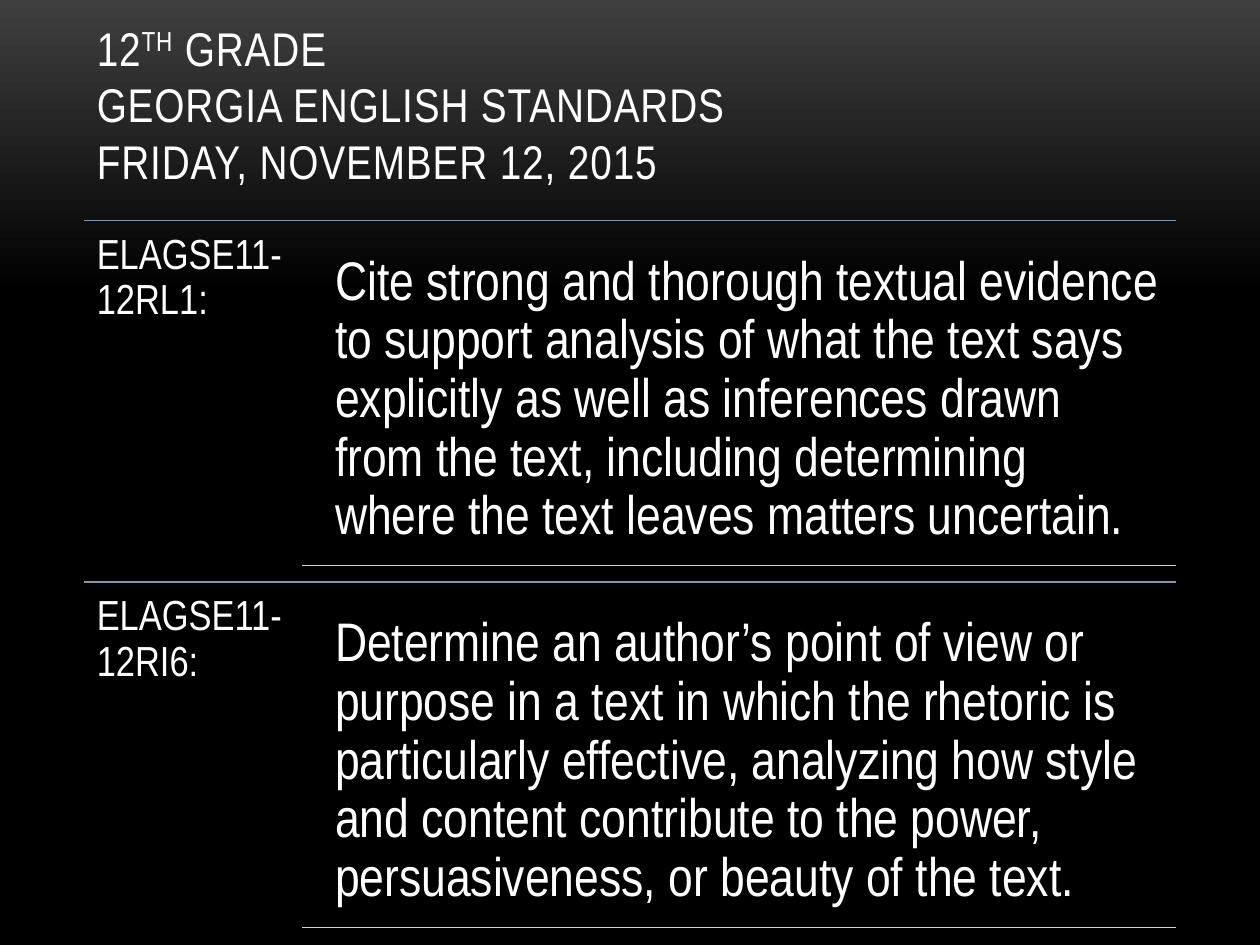
from dataclasses import dataclass

from lxml import etree
from pptx import Presentation
from pptx.dml.color import RGBColor
from pptx.enum.shapes import MSO_CONNECTOR
from pptx.enum.text import MSO_ANCHOR
from pptx.oxml.ns import qn
from pptx.util import Inches, Pt

STRAIGHT = MSO_CONNECTOR.STRAIGHT
TOP, BOTTOM = MSO_ANCHOR.TOP, MSO_ANCHOR.BOTTOM
FONT = "Arial Narrow"
COLORS = {
    "text": "FFFFFF",
    "glow": "3F3F3F",
    "back": "000000",
    "rule": "7E97AD",
    "underline": "CCD3DB",
}
LEFT, RIGHT = 0.67, 9.33
FIRST_ROW, ROW_HEIGHT = 1.75, 2.87


@dataclass
class Standard:
    code: str
    text: str


STANDARDS = [
    Standard(
        "ELAGSE11-12RL1:",
        "Cite strong and thorough textual evidence to support analysis of what "
        "the text says explicitly as well as inferences drawn from the text, "
        "including determining where the text leaves matters uncertain.",
    ),
    Standard(
        "ELAGSE11-12RI6:",
        "Determine an author’s point of view or purpose in a text in which the "
        "rhetoric is particularly effective, analyzing how style and content "
        "contribute to the power, persuasiveness, or beauty of the text.",
    ),
]


def rgb(name: str) -> RGBColor:
    """Look up a named colour."""
    return RGBColor.from_string(COLORS[name])


def add_box(s, x: float, y: float, w: float, h: float,
            inset_x: float, inset_y: float, anchor=TOP):
    """Add a wrapping text box and return its first paragraph."""
    sp = s.shapes.add_textbox(Inches(x), Inches(y), Inches(w), Inches(h))
    tf = sp.text_frame
    tf.word_wrap = True
    tf.vertical_anchor = anchor
    tf.margin_left = tf.margin_right = Inches(inset_x)
    tf.margin_top = tf.margin_bottom = Inches(inset_y)
    return tf.paragraphs[0]


def add_run(p, text: str, size: float):
    """Add a run in the slide's font and return it."""
    r = p.add_run()
    r.text = text
    r.font.name = FONT
    r.font.size = Pt(size)
    r.font.color.rgb = rgb("text")
    return r


def add_rule(s, x: float, y: float, color: str, width: float) -> None:
    """Draw a horizontal rule from x to the right margin."""
    line = s.shapes.add_connector(
        STRAIGHT, Inches(x), Inches(y), Inches(RIGHT), Inches(y))
    line.line.color.rgb = rgb(color)
    line.line.width = Pt(width)
    etree.SubElement(line._element.spPr, qn("a:effectLst"))


def add_title(s) -> None:
    """Add the three-line title with its raised ordinal."""
    p = add_box(s, LEFT, 0.3, 8.67, 1.25, 0.1, 0.05, BOTTOM)
    runs = [add_run(p, "12", 27), add_run(p, "TH", 27), add_run(p, " GRADE", 27)]
    runs[1].font._element.set("baseline", "30000")
    for text in ("GEORGIA ENGLISH STANDARDS", "FRIDAY, NOVEMBER 12, 2015"):
        p.add_line_break()
        runs.append(add_run(p, text, 27))
    for r in runs:
        r.font._element.set("spc", "50")


def add_standard(s, standard: Standard, y: float) -> None:
    """Add one row with its code, wording and rules."""
    add_rule(s, LEFT, y, "rule", 0.75)
    code = add_box(s, LEFT, y, 1.73, ROW_HEIGHT, 0.1, 0.1)
    wording = add_box(s, 2.53, y + 0.13, 6.8, 2.61, 0.13, 0.13)
    for p, text, size in ((code, standard.code, 24), (wording, standard.text, 31)):
        p.line_spacing = 0.9
        add_run(p, text, size)
    add_rule(s, 2.4, y + 2.74, "underline", 0.85)


def set_background(s) -> None:
    """Fade the background from grey at the top to black."""
    fill = s.background.fill
    fill.gradient()
    fill.gradient_angle = 270
    for stop, color, position in zip(
            fill.gradient_stops, ("glow", "back"), (0, 0.31)):
        stop.color.rgb = rgb(color)
        stop.position = position


def main() -> None:
    """Build and save the slide."""
    prs = Presentation()
    prs.slide_width, prs.slide_height = Inches(10), Inches(7.5)
    s = prs.slides.add_slide(prs.slide_layouts[6])
    set_background(s)
    add_title(s)
    for i, standard in enumerate(STANDARDS):
        add_standard(s, standard, FIRST_ROW + i * ROW_HEIGHT)
    prs.save("out.pptx")


if __name__ == "__main__":
    main()
